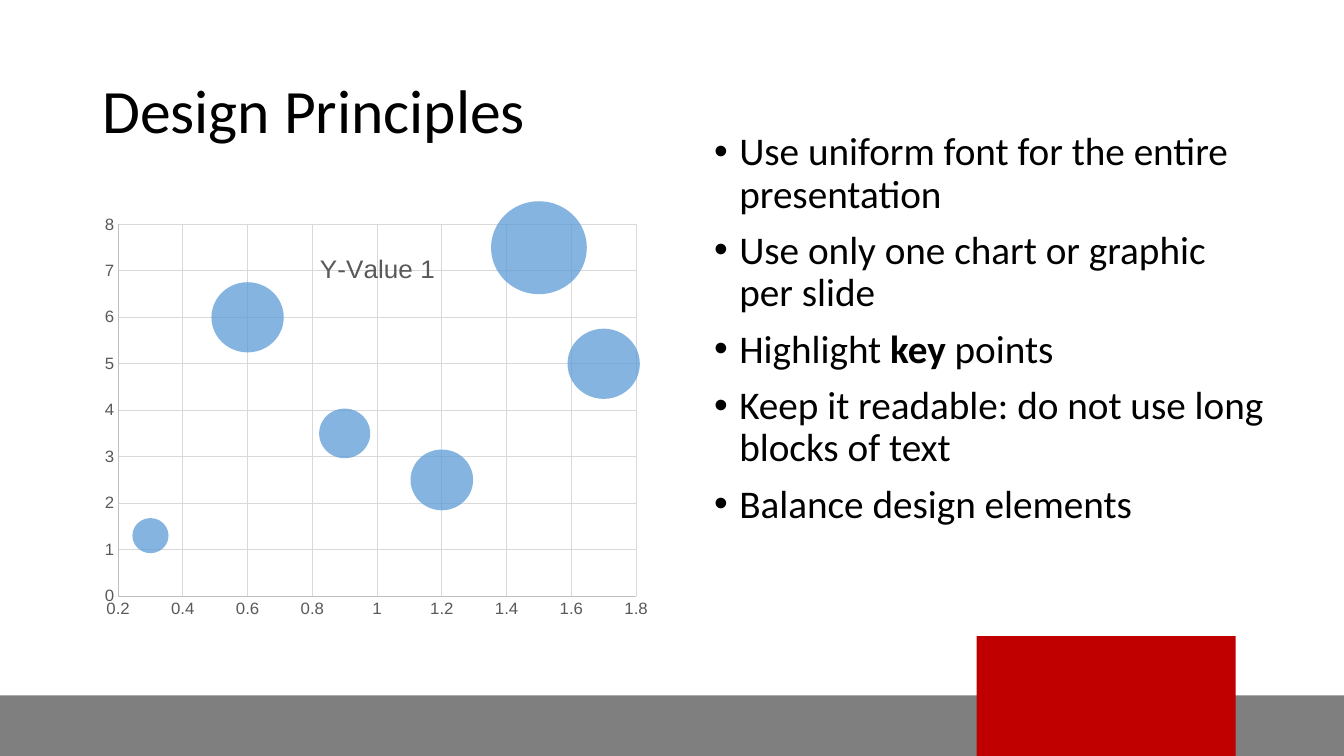
"""Build the Design Principles slide with a bubble chart and a bullet list."""
from lxml import etree
from pptx import Presentation
from pptx.chart.data import BubbleChartData
from pptx.dml.color import RGBColor
from pptx.enum.chart import XL_CHART_TYPE, XL_TICK_MARK
from pptx.enum.shapes import MSO_SHAPE
from pptx.enum.text import MSO_ANCHOR
from pptx.oxml.ns import qn
from pptx.util import Pt

BUBBLE = XL_CHART_TYPE.BUBBLE
NONE = XL_TICK_MARK.NONE
RECT = MSO_SHAPE.RECTANGLE
MIDDLE = MSO_ANCHOR.MIDDLE
BLACK = RGBColor(0x00, 0x00, 0x00)
GRAY = RGBColor(0x7F, 0x7F, 0x7F)
RED = RGBColor(0xC0, 0x00, 0x00)
BLUE = RGBColor(0x5B, 0x9B, 0xD5)
LABEL = RGBColor(0x59, 0x59, 0x59)
AXIS = RGBColor(0xBF, 0xBF, 0xBF)
GRID = RGBColor(0xD9, 0xD9, 0xD9)


def style(font, name, size, color, bold=False):
    values = {"name": name, "size": Pt(size), "bold": bold}
    for key, value in values.items():
        setattr(font, key, value)
    font.color.rgb = color


def place(node, values):
    layout = node.find(qn("c:layout"))
    if layout is None:
        layout = etree.Element(qn("c:layout"))
        node.insert(1 if node.find(qn("c:tx")) is not None else 0, layout)
    manual = etree.SubElement(layout, qn("c:manualLayout"))
    for tag, value in values.items():
        etree.SubElement(manual, qn("c:" + tag)).set("val", str(value))


deck = Presentation()
deck.slide_width, deck.slide_height = Pt(960), Pt(540)
slide = deck.slides.add_slide(deck.slide_layouts[6])
shapes = slide.shapes

for color, *box in [(GRAY, 0, 496.8, 960, 43.2), (RED, 697.7, 454.3, 185, 85.7)]:
    block = shapes.add_shape(RECT, *map(Pt, box))
    block.shadow.inherit = False
    block.fill.solid()
    block.fill.fore_color.rgb = color
    block.line.fill.background()

title = shapes.add_textbox(Pt(66), Pt(28.75), Pt(828), Pt(104.4)).text_frame
title.word_wrap = True
title.vertical_anchor = MIDDLE
head = title.paragraphs[0]
head.line_spacing = 0.9
run = head.add_run()
run.text = "Design Principles"
style(run.font, "Calibri", 44, BLACK)

data = BubbleChartData()
series = data.add_series("Y-Value 1")
for point in [(0.3, 1.3, 1), (0.6, 6, 4), (0.9, 3.5, 2),
              (1.2, 2.5, 3), (1.5, 7.5, 7), (1.7, 5, 4)]:
    series.add_data_point(*point)
frame = shapes.add_chart(BUBBLE, Pt(66), Pt(143.75), Pt(408), Pt(342.6), data)
chart = frame.chart
style(chart.font, "Arial", 10, BLACK)
chart.has_legend = False
chart.has_title = True
text = chart.chart_title.text_frame
text.text = "Y-Value 1"
style(text.paragraphs[0].runs[0].font, "Arial", 18.6, LABEL)
name = chart.chart_title._element
name.find(qn("c:overlay")).set("val", "1")
place(name, {"xMode": "edge", "yMode": "edge", "x": 0.39, "y": 0.07})
area = chart._chartSpace.chart.plotArea
place(area, {"layoutTarget": "inner", "xMode": "edge", "yMode": "edge",
             "x": 0.045, "y": 0.02, "w": 0.907, "h": 0.798})

look = chart.plots[0].series[0].format
look.fill.solid()
look.fill.fore_color.rgb = BLUE
look.line.fill.background()
tint = chart.plots[0].series[0]._element.find(".//" + qn("a:srgbClr"))
etree.SubElement(tint, qn("a:alpha")).set("val", "75000")

for axis, low, high, step in [(chart.category_axis, 0.2, 1.8, 0.2),
                              (chart.value_axis, 0, 8, 1)]:
    values = {"minimum_scale": low, "maximum_scale": high, "major_unit": step,
              "major_tick_mark": NONE, "minor_tick_mark": NONE,
              "has_major_gridlines": True}
    if axis is chart.category_axis:
        etree.SubElement(axis._element, qn("c:majorUnit")).set("val", str(step))
        del values["major_unit"]
    for key, value in values.items():
        setattr(axis, key, value)
    style(axis.tick_labels.font, "Arial", 12, LABEL)
    axis.tick_labels.number_format = "General"
    axis.tick_labels.number_format_is_linked = False
    for part, color in [(axis, AXIS), (axis.major_gridlines, GRID)]:
        part.format.line.color.rgb = color
        part.format.line.width = Pt(0.75)

body = shapes.add_textbox(Pt(503), Pt(90.7), Pt(408), Pt(342.6)).text_frame
body.word_wrap = True
points = [
    ["Use uniform font for the entire presentation"],
    ["Use only one chart or graphic per slide"],
    ["Highlight ", "key", " points"],
    ["Keep it readable: do not use long blocks of text"],
    ["Balance design elements"],
]
for row, parts in enumerate(points):
    para = body.add_paragraph() if row else body.paragraphs[0]
    props = para._p.get_or_add_pPr()
    props.set("marL", str(Pt(18)))
    props.set("indent", str(Pt(-18)))
    etree.SubElement(props, qn("a:buFont")).set("typeface", "Arial")
    etree.SubElement(props, qn("a:buChar")).set("char", "•")
    para.line_spacing = 0.9
    para.space_before = Pt(10 if row else 0)
    for part in parts:
        run = para.add_run()
        run.text = part
        style(run.font, "Calibri", 28, BLACK, part == "key")

deck.save("out.pptx")
